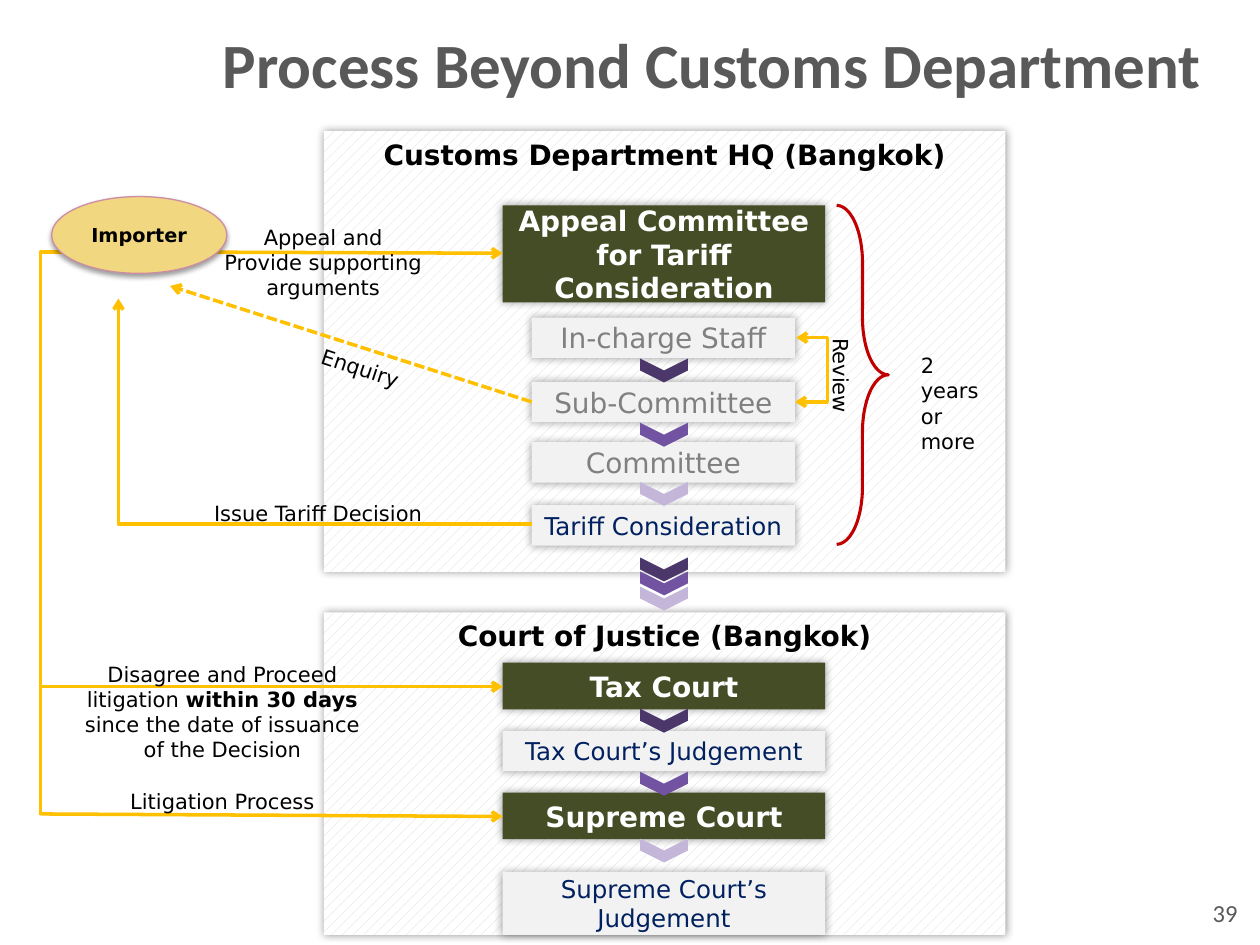
from lxml import etree
from pptx import Presentation
from pptx.dml.color import RGBColor
from pptx.enum.dml import MSO_LINE, MSO_PATTERN
from pptx.enum.shapes import MSO_CONNECTOR, MSO_SHAPE
from pptx.enum.text import MSO_ANCHOR, PP_ALIGN
from pptx.oxml.ns import qn
from pptx.util import Inches, Pt

RECT, OVAL = MSO_SHAPE.RECTANGLE, MSO_SHAPE.OVAL
CHEVRON, BRACE = MSO_SHAPE.CHEVRON, MSO_SHAPE.RIGHT_BRACE
STRAIGHT, ELBOW = MSO_CONNECTOR.STRAIGHT, MSO_CONNECTOR.ELBOW
TOP, MIDDLE = MSO_ANCHOR.TOP, MSO_ANCHOR.MIDDLE
LEFT, CENTER, RIGHT = PP_ALIGN.LEFT, PP_ALIGN.CENTER, PP_ALIGN.RIGHT

COLORS = {
    "title": "595959", "text": "000000", "white": "FFFFFF", "hatch": "D9D9D9",
    "olive": "444D26", "pale": "F2F2F2", "navy": "002060", "gray": "808080",
    "arrow": "FFC000", "brace": "C00000", "importer": "F1D77F", "importer_edge": "CD8DA3",
    "dark": "4C376B", "mid": "7153A1", "light": "C4B6D9",
}
BODY_FONT, TITLE_FONT = "DejaVu Sans", "Calibri"

# Columns: left and width
PANEL_COL = (2.57, 5.41)
WIDE_COL = (3.99, 2.56)
NARROW_COL = (4.22, 2.09)
AXIS = 5.27
IMPORTER_X, RETURN_X, TRUNK_X = 0.57, 0.94, 0.32
NARROW_RIGHT = sum(NARROW_COL)

# Box styles: fill, text colour, size, bold
STYLES = {
    "body": ("olive", "white", 16, True),
    "stage": ("pale", "gray", 16, False),
    "outcome": ("pale", "navy", 14, False),
}
PANELS = [("Customs Department HQ (Bangkok)", 1.04, 3.5),
          ("Court of Justice (Bangkok)", 4.86, 2.56)]
BOXES = [  # text, style, column, top, height
    ("Appeal Committee for Tariff Consideration", "body", WIDE_COL, 1.63, 0.77),
    ("In-charge Staff", "stage", NARROW_COL, 2.52, 0.32),
    ("Sub-Committee", "stage", NARROW_COL, 3.03, 0.32),
    ("Committee", "stage", NARROW_COL, 3.51, 0.32),
    ("Tariff Consideration", "outcome", NARROW_COL, 4.01, 0.32),
    ("Tax Court", "body", WIDE_COL, 5.26, 0.37),
    ("Tax Court’s Judgement", "outcome", WIDE_COL, 5.8, 0.32),
    ("Supreme Court", "body", WIDE_COL, 6.29, 0.37),
    ("Supreme Court’s Judgement", "outcome", WIDE_COL, 6.92, 0.5),
]
CHEVRON_SIZE = (0.19, 0.38)
CHEVRON_SHADES = ("dark", "mid", "light")
CHEVRON_CENTERS = [(2.94, 3.45, 3.92), (5.72, 6.22, 6.75), (4.52, 4.63, 4.75)]
LABELS = [  # paragraphs, left, top, width, height, alignment, rotation
    (["2 years or more"], 7.21, 2.75, 0.77, 0.5, LEFT, 0),
    (["Review"], 6.21, 2.9, 0.93, 0.3, LEFT, 90),
    (["Appeal and", "Provide supporting arguments"], 1.37, 1.73, 2.39, 0.5, CENTER, 0),
    (["Issue Tariff Decision"], 1.33, 3.92, 2.39, 0.3, CENTER, 0),
    (["Disagree and Proceed",
      [("litigation ", False), ("within 30 days", True),
       (" since the date of issuance of the Decision", False)]],
     IMPORTER_X, 5.2, 2.39, 0.91, CENTER, 0),
    (["Enquiry"], 2.43, 2.77, 0.86, 0.3, CENTER, 18.4),
    (["Litigation Process"], IMPORTER_X, 6.21, 2.39, 0.3, CENTER, 0),
]


def color(key):
    return RGBColor.from_string(COLORS[key])


def child(parent, tag, **attributes):
    return etree.SubElement(parent, qn(tag), attributes)


def add_glow(shape, alpha=40, blur=5, distance=0, angle=0):
    """Give the shape a soft black outer shadow; blur and distance in points."""
    shape.shadow.inherit = False
    effects = shape._element.spPr.find(qn("a:effectLst"))
    shadow = child(effects, "a:outerShdw", blurRad=str(Pt(blur)), dist=str(Pt(distance)),
                   dir=str(angle * 60000), algn="ctr", rotWithShape="0")
    black = child(shadow, "a:srgbClr", val=COLORS["text"])
    child(black, "a:alpha", val=str(alpha * 1000))


def write(shape, paragraphs, size, ink="text", bold=False, align=CENTER,
          anchor=MIDDLE, font=BODY_FONT):
    """Fill the shape with paragraphs, each a string or a list of (text, bold)."""
    frame = shape.text_frame
    frame.word_wrap = True
    frame.vertical_anchor = anchor
    for i, content in enumerate(paragraphs):
        paragraph = frame.paragraphs[0] if i == 0 else frame.add_paragraph()
        paragraph.alignment = align
        paragraph.font.size, paragraph.font.name = Pt(size), font
        paragraph.font.color.rgb = color(ink)
        if isinstance(content, str):
            paragraph.font.bold = bold
            content = [(content, None)]
        for words, run_bold in content:
            run = paragraph.add_run()
            run.text = words
            run.font.bold = run_bold


def add_box(shapes, kind, left, top, width, height, fill=None):
    box = shapes.add_shape(kind, *map(Inches, (left, top, width, height)))
    box.shadow.inherit = False
    box.line.fill.background()
    if fill:
        box.fill.solid()
        box.fill.fore_color.rgb = color(fill)
    else:
        box.fill.background()
    return box


def add_text(shapes, paragraphs, left, top, width, height, **style):
    text = shapes.add_textbox(*map(Inches, (left, top, width, height)))
    write(text, paragraphs, **style)
    return text


def add_flow(shapes, start, end, head=False, tail=True, dashed=False, via_x=None):
    """Draw a flow line; via_x is the x of the upright part of an elbow."""
    kind = STRAIGHT if via_x is None else ELBOW
    flow = shapes.add_connector(kind, *map(Inches, (*start, *end)))
    flow.line.color.rgb = color("arrow")
    flow.line.width = Pt(2)
    if dashed:
        flow.line.dash_style = MSO_LINE.SQUARE_DOT
    properties = flow._element.spPr
    outline = properties.find(qn("a:ln"))
    for tag, shown in (("a:headEnd", head), ("a:tailEnd", tail)):
        if shown:
            child(outline, tag, type="arrow")
    child(properties, "a:effectLst")
    if via_x is None:
        return
    geometry = properties.find(qn("a:prstGeom"))
    if via_x == end[0]:
        geometry.set("prst", "bentConnector2")
    else:
        share = (via_x - start[0]) / (end[0] - start[0])
        child(geometry.find(qn("a:avLst")), "a:gd", name="adj1",
              fmla=f"val {round(share * 100000)}")


def main():
    deck = Presentation()
    deck.slide_width, deck.slide_height = Inches(10), Inches(7.5)
    shapes = deck.slides.add_slide(deck.slide_layouts[6]).shapes

    add_text(shapes, ["Process Beyond Customs Department"], 1.67, 0, 8.33, 1, size=36,
             ink="title", bold=True, align=LEFT, font=TITLE_FONT)
    add_text(shapes, ["39"], 8.5, 7.08, 1.42, 0.42, size=14, ink="title",
             align=RIGHT, anchor=TOP, font=TITLE_FONT)

    for heading, top, height in PANELS:
        panel = add_box(shapes, RECT, PANEL_COL[0], top, PANEL_COL[1], height)
        panel.fill.patterned()
        panel.fill.pattern = MSO_PATTERN.PERCENT_20
        panel.fill.fore_color.rgb = color("hatch")
        panel.fill.back_color.rgb = color("white")
        add_glow(panel)
        write(panel, [heading], 16, bold=True, anchor=TOP)

    for words, style, (left, width), top, height in BOXES:
        fill, ink, size, bold = STYLES[style]
        box = add_box(shapes, RECT, left, top, width, height, fill)
        add_glow(box)
        write(box, [words], size, ink, bold)

    width, height = CHEVRON_SIZE
    for centers in CHEVRON_CENTERS:
        for center, shade in zip(centers, CHEVRON_SHADES):
            chevron = add_box(shapes, CHEVRON, AXIS - width / 2, center - height / 2,
                              width, height, shade)
            chevron.rotation = 90

    brace = add_box(shapes, BRACE, 6.64, 1.63, 0.41, 2.69)
    brace.adjustments[0] = 1.11
    brace.line.color.rgb = color("brace")
    brace.line.width = Pt(1.75)

    add_flow(shapes, (NARROW_RIGHT, 3.19), (NARROW_RIGHT + 0.01, 2.68), head=True, via_x=6.57)
    add_flow(shapes, (1.32, 2), (WIDE_COL[0], 2.01))
    add_flow(shapes, (NARROW_COL[0], 4.16), (RETURN_X, 2.37), via_x=RETURN_X)
    add_flow(shapes, (NARROW_COL[0], 3.19), (1.35, 2.27), dashed=True)
    add_flow(shapes, (IMPORTER_X, 2), (WIDE_COL[0], 5.45), via_x=TRUNK_X)
    add_flow(shapes, (TRUNK_X, 6.46), (WIDE_COL[0], 6.48))
    add_flow(shapes, (TRUNK_X, 6.47), (TRUNK_X, 5.45), tail=False)

    for paragraphs, left, top, width, height, align, rotation in LABELS:
        label = add_text(shapes, paragraphs, left, top, width, height,
                         size=12, align=align, anchor=TOP)
        label.rotation = rotation

    importer = add_box(shapes, OVAL, 0.41, 1.56, 1.39, 0.61, "importer")
    importer.line.color.rgb = color("importer_edge")
    importer.line.width = Pt(0.75)
    add_glow(importer, alpha=38, blur=3.1, distance=1.6, angle=90)
    write(importer, ["Importer"], 11, bold=True)

    deck.save("out.pptx")


if __name__ == "__main__":
    main()
